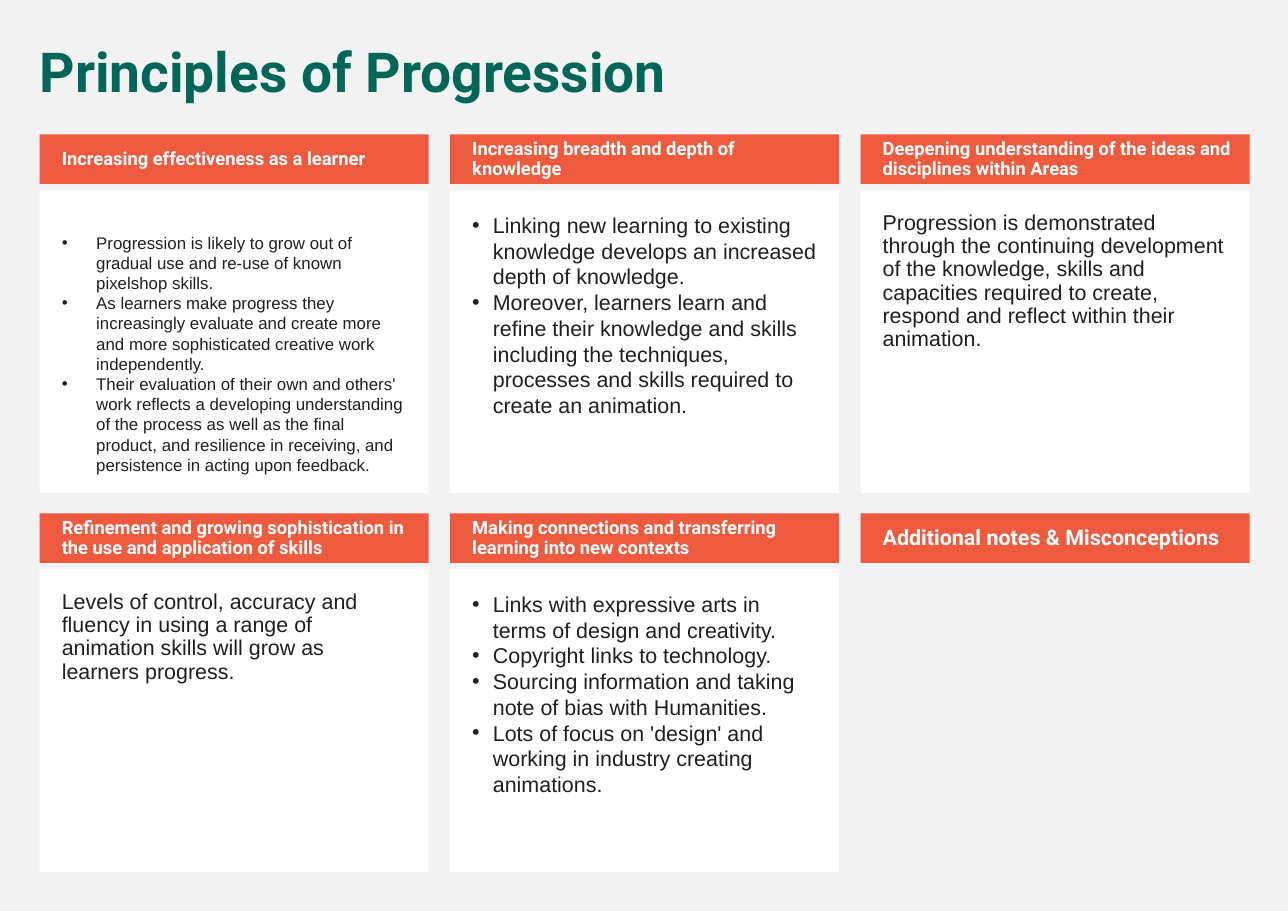
from dataclasses import dataclass

from pptx import Presentation, util as u
from pptx.dml.color import RGBColor
from pptx.enum import shapes, text
from pptx.oxml import parse_xml
from pptx.oxml.ns import nsdecls


@dataclass(frozen=True)
class Theme:
    page: str = "F2F2F2"
    card: str = "FFFFFF"
    accent: str = "ED5A3E"
    title: str = "006758"
    body: str = "1F1F1F"
    heading_font: str = "Roboto"
    body_font: str = "Arial"
    title_size: int = 36
    large: int = 14
    medium: int = 12
    small: int = 11


theme = Theme()
LEFT, TOP = 26, 87.8
COLUMN_STEP, ROW_STEP = 268.2, 247.7
CARD_W, HEADER_H = 254.2, 32.4
BODY_OFFSET, BODY_H = 36.4, 198


def add_panel(x, y, h, fill, insets):
    s = sl.shapes.add_shape(shapes.MSO_SHAPE.RECTANGLE, u.Pt(x), u.Pt(y), u.Pt(CARD_W), u.Pt(h))
    s.shadow.inherit = False
    s.fill.solid()
    s.fill.fore_color.rgb = RGBColor.from_string(fill)
    s.line.fill.background()
    tf = s.text_frame
    tf.word_wrap = True
    tf.margin_left, tf.margin_top, tf.margin_right, tf.margin_bottom = map(u.Pt, insets)
    return tf


def add_text(tf, lines, font, size, color, bold=False, indent=0):
    for i, line in enumerate(lines):
        p = tf.add_paragraph() if i else tf.paragraphs[0]
        p.alignment = text.PP_ALIGN.LEFT
        if indent:
            pPr = p._p.get_or_add_pPr()
            pPr.set("marL", str(u.Pt(indent)))
            pPr.set("indent", str(-u.Pt(indent)))
            pPr.append(parse_xml(f'<a:buFont {nsdecls("a")} typeface="Arial"/>'))
            pPr.append(parse_xml(f'<a:buChar {nsdecls("a")} char="•"/>'))
        else:
            p.line_spacing = 0.9
        r = p.add_run()
        r.text = line
        r.font.name, r.font.size, r.font.bold = font, u.Pt(size), bold
        r.font.color.rgb = RGBColor.from_string(color)


# Heading, heading size, body lines, body size, bullet indent, top inset
cards = [
    ("Increasing effectiveness as a learner", theme.medium, [
        "Progression is likely to grow out of gradual use and re-use of known pixelshop skills.",
        "As learners make progress they increasingly evaluate and create more and more "
        "sophisticated creative work independently.",
        "Their evaluation of their own and others' work reflects a developing understanding "
        "of the process as well as the final product, and resilience in receiving, "
        "and persistence in acting upon feedback.",
    ], theme.small, 22.5, 27.6),
    ("Increasing breadth and depth of knowledge", theme.medium, [
        "Linking new learning to existing knowledge develops an increased depth of knowledge.",
        "Moreover, learners learn and refine their knowledge and skills including "
        "the techniques, processes and skills required to create an animation.",
    ], theme.large, 13.5, 14.4),
    ("Deepening understanding of the ideas and disciplines within Areas", theme.medium, [
        "Progression is demonstrated through the continuing development of the knowledge, "
        "skills and capacities required to create, respond and reflect within their animation.",
    ], theme.large, 0, 14.4),
    ("Refinement and growing sophistication in the use and application of skills", theme.medium, [
        "Levels of control, accuracy and fluency in using a range of animation skills "
        "will grow as learners progress.",
    ], theme.large, 0, 14.4),
    ("Making connections and transferring learning into new contexts", theme.medium, [
        "Links with expressive arts in terms of design and creativity.",
        "Copyright links to technology.",
        "Sourcing information and taking note of bias with Humanities.",
        "Lots of focus on 'design' and working in industry creating animations.",
    ], theme.large, 13.5, 14.4),
    ("Additional notes & Misconceptions", theme.large, [], theme.large, 0, 14.4),
]

# Slide and background
prs = Presentation()
prs.slide_width, prs.slide_height = u.Pt(841.7), u.Pt(595.4)
sl = prs.slides.add_slide(prs.slide_layouts[6])
sl.background.fill.solid()
sl.background.fill.fore_color.rgb = RGBColor.from_string(theme.page)

# Title
s = sl.shapes.add_textbox(u.Pt(18.7), u.Pt(25.9), u.Pt(797.8), u.Pt(46.8))
s.text_frame.word_wrap = True
add_text(s.text_frame, ["Principles of Progression"], theme.heading_font,
         theme.title_size, theme.title, bold=True)

# Cards: three columns, two rows
for i, (heading, heading_size, lines, size, indent, inset) in enumerate(cards):
    row, column = divmod(i, 3)
    x, y = LEFT + column * COLUMN_STEP, TOP + row * ROW_STEP
    if lines:
        tf = add_panel(x, y + BODY_OFFSET, BODY_H, theme.card, (14.4, inset, 14.4, 14.4))
        tf.vertical_anchor = text.MSO_ANCHOR.TOP
        add_text(tf, lines, theme.body_font, size, theme.body, indent=indent)
    tf = add_panel(x, y, HEADER_H, theme.accent, (14.4, 3.6, 7.2, 3.6))
    tf.vertical_anchor = text.MSO_ANCHOR.MIDDLE
    add_text(tf, [heading], theme.heading_font, heading_size, theme.card, bold=True)

prs.save("out.pptx")
